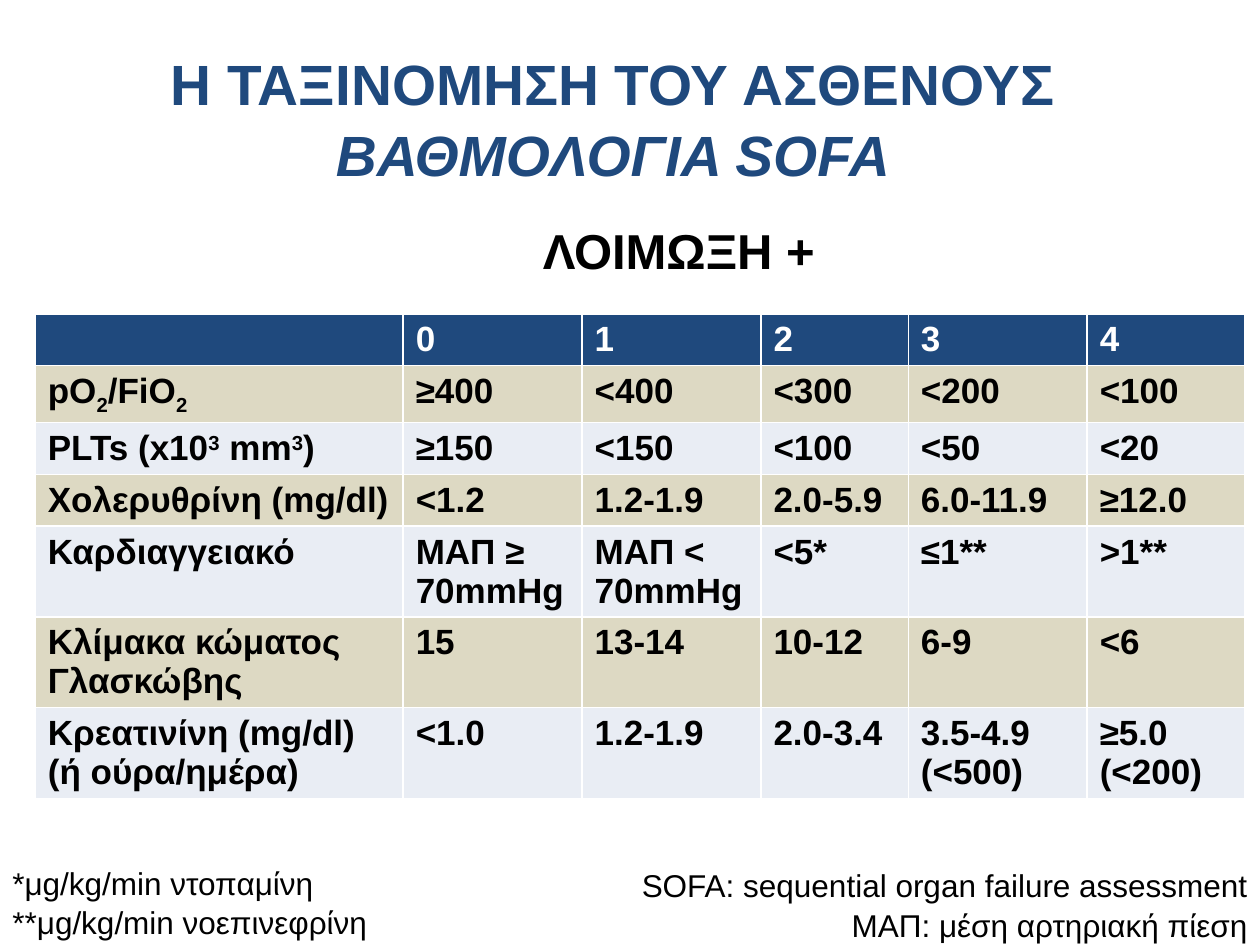
from pptx import Presentation
from pptx.dml.color import RGBColor
from pptx.enum import text
from pptx.util import Inches, Pt

COLORS = {"navy": "1F497D", "sand": "DDD9C3", "mist": "E9EDF4",
          "white": "FFFFFF", "black": "000000"}
SUBSCRIPT, SUPERSCRIPT = -25000, 30000


def add_runs(paragraph, content, color, **formats):
    """Content is a string or a list of (string, baseline shift) pairs."""
    pieces = [(content, 0)] if isinstance(content, str) else content
    for words, baseline in pieces:
        run = paragraph.add_run()
        run.text = words
        for name, value in {"name": "Arial", **formats}.items():
            setattr(run.font, name, value)
        run.font.color.rgb = RGBColor.from_string(COLORS[color])
        if baseline:
            run.font._element.set("baseline", str(baseline))


presentation = Presentation()
presentation.slide_width, presentation.slide_height = Inches(10), Inches(7.5)
slide = presentation.slides.add_slide(presentation.slide_layouts[5])

# Title
title = slide.shapes.title
title.left, title.top = Inches(0.32), Inches(0.3)
title.width, title.height = Inches(9.09), Inches(1.25)
title.text_frame.auto_size = text.MSO_AUTO_SIZE.NONE
title.text_frame.vertical_anchor = text.MSO_ANCHOR.MIDDLE
paragraph = title.text_frame.paragraphs[0]
paragraph.alignment = text.PP_ALIGN.CENTER
paragraph.line_spacing = 1.05
add_runs(paragraph, "Η ΤΑΞΙΝΟΜΗΣΗ ΤΟΥ ΑΣΘΕΝΟΥΣ", "navy", size=Pt(32.4), bold=True)
paragraph.add_line_break()
add_runs(paragraph, "ΒΑΘΜΟΛΟΓΙΑ SOFA", "navy", size=Pt(32.4), bold=True, italic=True)

# SOFA score table
column_widths = [2.92, 1.42, 1.42, 1.17, 1.42, 1.25]
row_height = 0.41
oxygen = [("pO", 0), ("2", SUBSCRIPT), ("/FiO", 0), ("2", SUBSCRIPT)]
platelets = [("PLTs (x10", 0), ("3", SUPERSCRIPT), (" mm", 0),
             ("3", SUPERSCRIPT), (")", 0)]
scores = [
    ["", "0", "1", "2", "3", "4"],
    [oxygen, "≥400", "<400", "<300", "<200", "<100"],
    [platelets, "≥150", "<150", "<100", "<50", "<20"],
    ["Χολερυθρίνη (mg/dl)", "<1.2", "1.2-1.9", "2.0-5.9", "6.0-11.9", "≥12.0"],
    ["Καρδιαγγειακό", "ΜΑΠ ≥ 70mmHg", "ΜΑΠ < 70mmHg", "<5*", "≤1**", ">1**"],
    ["Κλίμακα κώματος Γλασκώβης", "15", "13-14", "10-12", "6-9", "<6"],
    ["Κρεατινίνη (mg/dl) (ή ούρα/ημέρα)", "<1.0", "1.2-1.9", "2.0-3.4",
     "3.5-4.9 (<500)", "≥5.0 (<200)"],
]
table = slide.shapes.add_table(
    len(scores), len(column_widths), Inches(0.28), Inches(2.49),
    Inches(sum(column_widths)), Inches(row_height * len(scores))).table
for column, width in zip(table.columns, column_widths):
    column.width = Inches(width)
for row_index, row in enumerate(scores):
    table.rows[row_index].height = Inches(row_height)
    fill = "navy" if row_index == 0 else ("mist", "sand")[row_index % 2]
    for column_index, content in enumerate(row):
        cell = table.cell(row_index, column_index)
        cell.fill.solid()
        cell.fill.fore_color.rgb = RGBColor.from_string(COLORS[fill])
        if content:
            add_runs(cell.text_frame.paragraphs[0], content,
                     "black" if row_index else "white", size=Pt(20), bold=True)

# Subtitle and footnotes
notes = [
    ((4.21, 1.68, 2.37, 0.57), text.PP_ALIGN.LEFT, 28, True, ["ΛΟΙΜΩΞΗ +"]),
    ((0, 6.79, 3.04, 0.71), text.PP_ALIGN.LEFT, 18, False,
     ["*μg/kg/min ντοπαμίνη", "**μg/kg/min νοεπινεφρίνη"]),
    ((4.81, 6.81, 5.19, 0.71), text.PP_ALIGN.RIGHT, 18, False,
     ["SOFA: sequential organ failure assessment", "ΜΑΠ: μέση αρτηριακή πίεση"]),
]
for position, alignment, size, bold, lines in notes:
    frame = slide.shapes.add_textbox(*map(Inches, position)).text_frame
    frame.word_wrap = False
    frame.auto_size = text.MSO_AUTO_SIZE.SHAPE_TO_FIT_TEXT
    for index, line in enumerate(lines):
        paragraph = frame.add_paragraph() if index else frame.paragraphs[0]
        paragraph.alignment = alignment
        paragraph.line_spacing = 1.05
        add_runs(paragraph, line, "black", size=Pt(size), bold=bold)

presentation.save("out.pptx")
